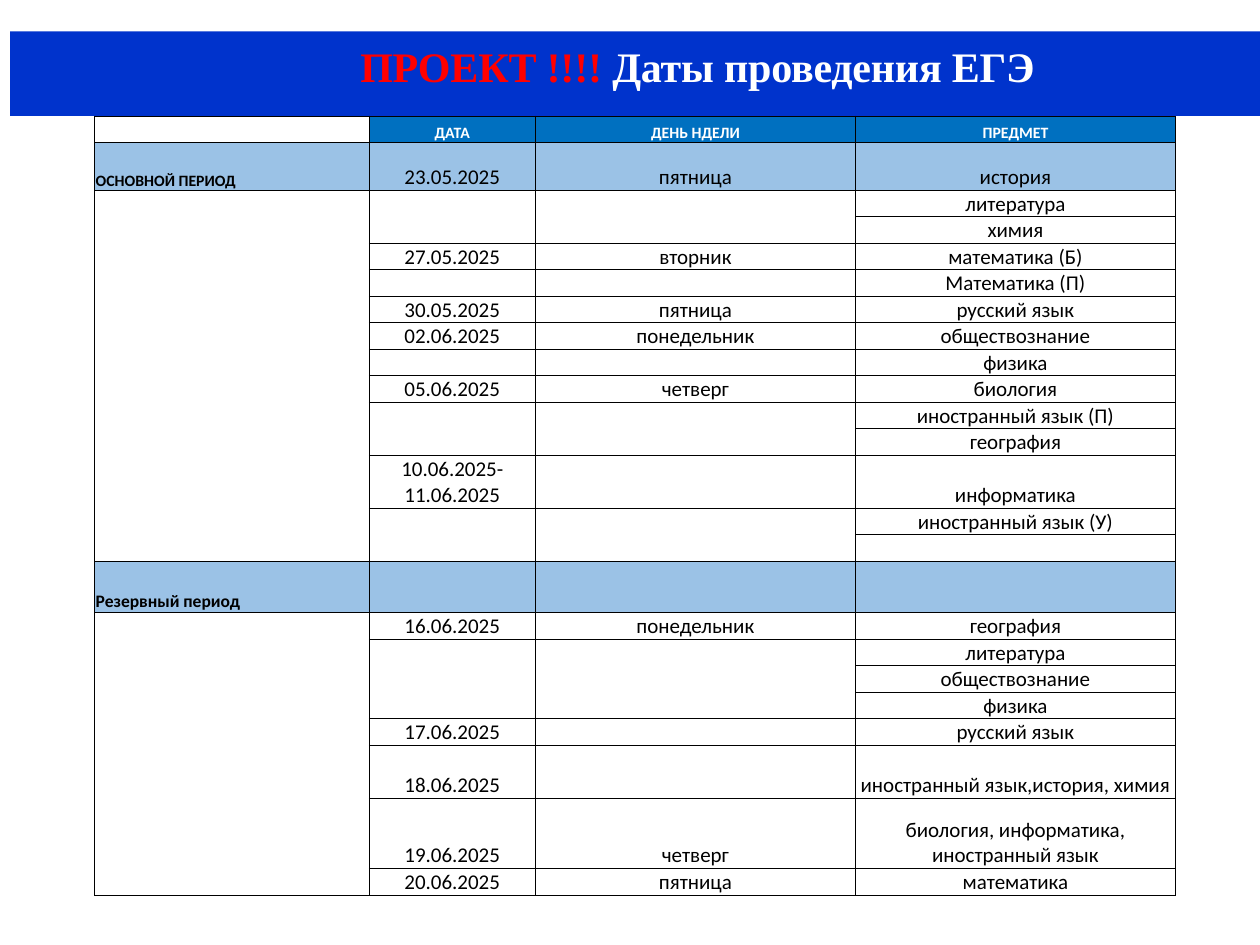
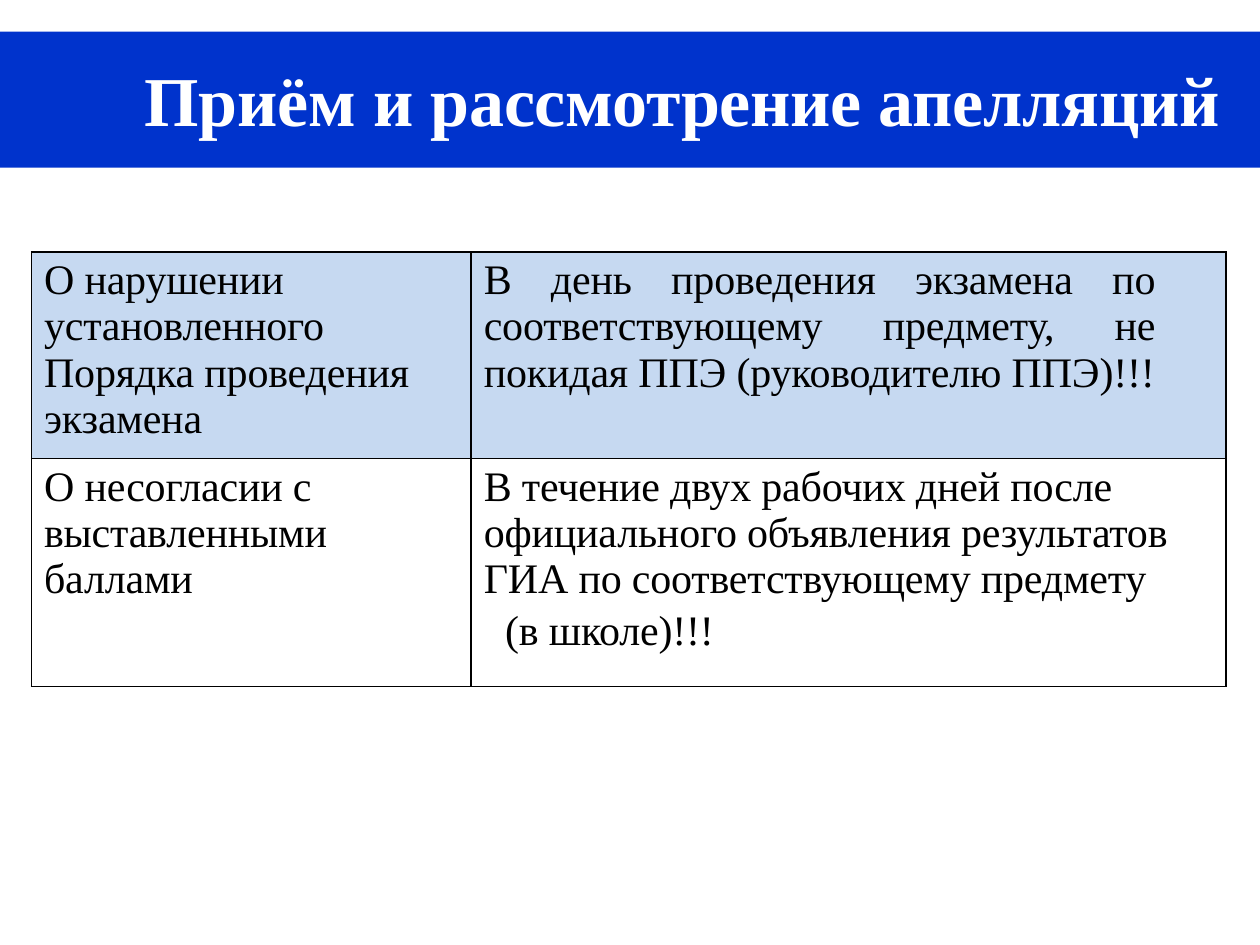
from lxml.etree import SubElement
from pptx import Presentation
from pptx.dml.color import RGBColor
from pptx.enum.shapes import MSO_SHAPE
from pptx.enum.text import MSO_ANCHOR, PP_ALIGN
from pptx.oxml.ns import qn
from pptx.util import Pt

PX = 9144  # 100 px to the inch
COLOURS = {
    "band": "0033CC", "alert": "FF0000", "white": "FFFFFF", "black": "000000",
    "header": "0070C0", "period": "9BC2E6", "highlight": "C6D9F1",
}
SERIF, SANS = "Times New Roman", "Calibri"


def style_text(para, face, size, colour="black", bold=False, align=PP_ALIGN.LEFT, spacing=0):
    """Set the paragraph's font; spacing is in hundredths of a point."""
    para.alignment = align
    para.font.name, para.font.size, para.font.bold = face, Pt(size), bold
    para.font.color.rgb = RGBColor.from_string(COLOURS[colour])
    para._p.pPr.find(qn("a:defRPr")).set("spc", str(spacing))
    if not para.runs:
        para._p.get_or_add_endParaRPr().set("sz", str(size * 100))


def style_cell(cell, fill, line_width, insets):
    """Give the cell black borders, a fill (or none) and its four insets in px."""
    cell.margin_left, cell.margin_top, cell.margin_right, cell.margin_bottom = [
        inset * PX for inset in insets]
    properties = cell._tc.get_or_add_tcPr()
    for side in ("lnL", "lnR", "lnT", "lnB"):
        line = SubElement(properties, qn(f"a:{side}"), w=str(Pt(line_width)))
        solid = SubElement(line, qn("a:solidFill"))
        SubElement(solid, qn("a:srgbClr"), val=COLOURS["black"])
    if fill:
        cell.fill.solid()
        cell.fill.fore_color.rgb = RGBColor.from_string(COLOURS[fill])
    else:
        cell.fill.background()


deck = Presentation()
deck.slide_width, deck.slide_height = 1000 * PX, 750 * PX

# Title bands: band place, title place, size, runs
titles = [
    ((8, 25, 992, 67), (107, 27, 893, 50), 24,
     [("ПРОЕКТ !!!! ", "alert"), ("Даты проведения ЕГЭ", "white")]),
    ((0, 25, 1000, 108), (83, 40, 917, 77), 40,
     [("Приём и рассмотрение апелляций", "white")]),
]
pages = []
for band_place, title_place, size, spans in titles:
    page = deck.slides.add_slide(deck.slide_layouts[6])
    pages.append(page)
    band = page.shapes.add_shape(MSO_SHAPE.RECTANGLE, *[n * PX for n in band_place])
    band.shadow.inherit = False
    band.fill.solid()
    band.fill.fore_color.rgb = RGBColor.from_string(COLOURS["band"])
    band.line.fill.background()
    box = page.shapes.add_textbox(*[n * PX for n in title_place])
    box.text_frame.word_wrap = True
    para = box.text_frame.paragraphs[0]
    for text, colour in spans:
        span = para.add_run()
        span.text = text
        span.font.color.rgb = RGBColor.from_string(COLOURS[colour])
    style_text(para, SERIF, size, "white", True, PP_ALIGN.CENTER, -10)

# Exam dates
exams = [
    ("", "ДАТА", "ДЕНЬ НДЕЛИ", "ПРЕДМЕТ"),
    ("ОСНОВНОЙ ПЕРИОД", "23.05.2025", "пятница", "история"),
    ("", "", "", "литература"),
    ("", "", "", "химия"),
    ("", "27.05.2025", "вторник", "математика (Б)"),
    ("", "", "", "Математика (П)"),
    ("", "30.05.2025", "пятница", "русский язык"),
    ("", "02.06.2025", "понедельник", "обществознание"),
    ("", "", "", "физика"),
    ("", "05.06.2025", "четверг", "биология"),
    ("", "", "", "иностранный язык (П)"),
    ("", "", "", "география"),
    ("", "10.06.2025-11.06.2025", "", "информатика"),
    ("", "", "", "иностранный язык (У)"),
    ("", "", "", ""),
    ("Резервный период", "", "", ""),
    ("", "16.06.2025", "понедельник", "география"),
    ("", "", "", "литература"),
    ("", "", "", "обществознание"),
    ("", "", "", "физика"),
    ("", "17.06.2025", "", "русский язык"),
    ("", "18.06.2025", "", "иностранный язык,история, химия"),
    ("", "19.06.2025", "четверг", "биология, информатика, иностранный язык"),
    ("", "20.06.2025", "пятница", "математика"),
]
tall_rows = {1: 38, 12: 42, 15: 41, 21: 42, 22: 56}
period_sizes = {1: 9, 15: 10}
merged_rows = {0: [(2, 14), (16, 23)]}
merged_rows[1] = merged_rows[2] = [(2, 3), (10, 11), (13, 14), (17, 19)]

schedule = pages[0].shapes.add_table(
    len(exams), 4, 75 * PX, 92 * PX, 858 * PX, 617 * PX).table
schedule.first_row = schedule.horz_banding = False
for column, width in zip(schedule.columns, (218, 132, 254, 254)):
    column.width = width * PX
for row, texts in enumerate(exams):
    schedule.rows[row].height = tall_rows.get(row, 21) * PX
    for col, text in enumerate(texts):
        cell = schedule.cell(row, col)
        fill = "period" if row in period_sizes else None
        size, colour, bold, align = 12, "black", False, PP_ALIGN.CENTER
        if row == 0:
            size, colour, bold = 9, "white", True
            fill = "header" if col else None
        elif col == 0 and row in period_sizes:
            size, bold, align = period_sizes[row], True, PP_ALIGN.LEFT
        style_cell(cell, fill, 0.5, (1, 1, 1, 0))
        cell.vertical_anchor = MSO_ANCHOR.BOTTOM
        para = cell.text_frame.paragraphs[0]
        if text:
            para.add_run().text = text
        style_text(para, SANS, size, colour, bold, align)
for col, row_ranges in merged_rows.items():
    for first, last in row_ranges:
        schedule.cell(first, col).merge(schedule.cell(last, col))

# Appeals: each cell holds paragraphs of (text, left margin, space before)
appeals = [
    [[("О нарушении", 10, 3),
      ("установленного Порядка проведения экзамена", 10, 0)],
     [("В день проведения экзамена по соответствующему предмету, "
       "не покидая ППЭ (руководителю ППЭ)!!!", 10, 3)]],
    [[("О несогласии с", 10, 3), ("выставленными", 10, 0), ("баллами", 10, 0)],
     [("В течение двух рабочих дней после официального объявления результатов "
       "ГИА по соответствующему предмету", 10, 3),
      ("(в школе)!!!", 27, 3)]],
]
deadlines = pages[1].shapes.add_table(2, 2, 25 * PX, 200 * PX, 948 * PX, 342 * PX).table
deadlines.first_row = deadlines.horz_banding = False
for column, width in zip(deadlines.columns, (349, 599)):
    column.width = width * PX
for row, height in enumerate((161, 181)):
    deadlines.rows[row].height = height * PX
    for col, lines in enumerate(appeals[row]):
        cell = deadlines.cell(row, col)
        style_cell(cell, None if row else "highlight", 1, (0, 4, 0, 0))
        justified = (row, col) == (0, 1)
        for number, (text, margin, before) in enumerate(lines):
            frame = cell.text_frame
            para = frame.add_paragraph() if number else frame.paragraphs[0]
            para.add_run().text = text
            para.space_before = Pt(before)
            style_text(para, SERIF, 24, spacing=-10,
                       align=PP_ALIGN.JUSTIFY if justified else PP_ALIGN.LEFT)
            para._p.pPr.set("marL", str(margin * PX))
            if justified:
                para._p.pPr.set("marR", str(56 * PX))

deck.save("out.pptx")
